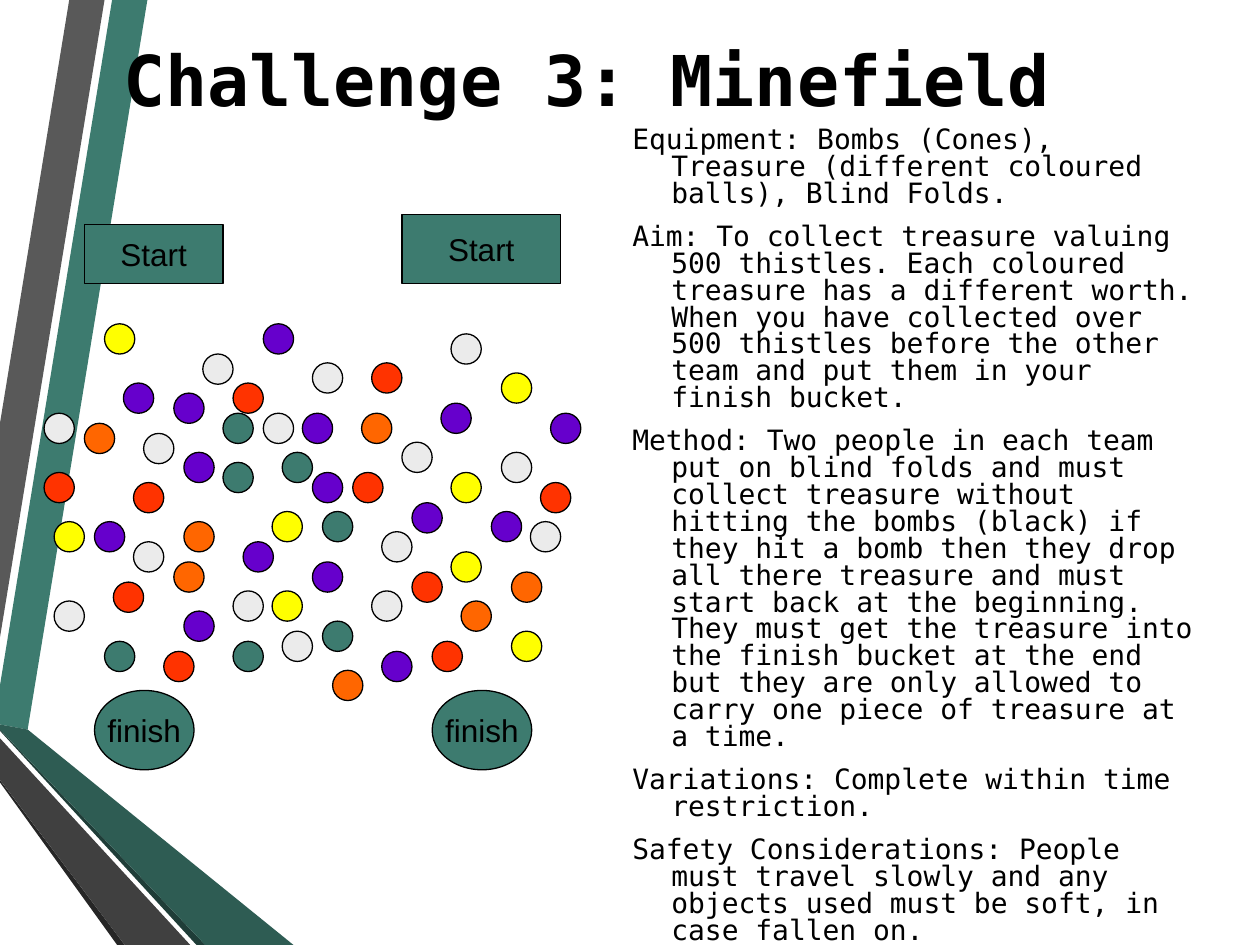
from pptx import Presentation
from pptx.dml.color import RGBColor
from pptx.enum import shapes, text
from pptx.util import Inches, Pt

# Content
GREEN, BLACK = "3D7B6F", "000000"
MONO, SANS = "DejaVu Sans Mono", "Arial"
TITLE = "Challenge 3: Minefield "
INSTRUCTIONS = [
    "Equipment: Bombs (Cones), Treasure (different coloured balls), Blind Folds.",
    "Aim: To collect treasure valuing 500 thistles. Each coloured treasure has a "
    "different worth. When you have collected over 500 thistles before the other "
    "team and put them in your finish bucket.",
    "Method: Two people in each team put on blind folds and must collect treasure "
    "without hitting the bombs (black) if they hit a bomb then they drop all there "
    "treasure and must start back at the beginning. They must get the treasure into "
    "the finish bucket at the end but they are only allowed to carry one piece of "
    "treasure at a time.",
    "Variations: Complete within time restriction.",
    "Safety Considerations: People must travel slowly and any objects used must be "
    "soft, in case fallen on.",
]
RIBBONS = [
    (GREEN, [(0, 5.44), (0, 5.75), (0.22, 5.79), (1.17, 0), (0.89, 0)]),
    ("595959", [(0.83, 0), (0.55, 0), (0, 3.36), (0, 5.06)]),
    ("262626", [(0, 6.19), (0, 6.21), (0.93, 7.5), (0.99, 7.5)]),
    ("1F3D38", [(0, 5.79), (0, 5.8), (1.56, 7.5), (1.63, 7.5)]),
    ("2E5C53", [(0, 5.79), (1.63, 7.5), (2.33, 7.5), (0.22, 5.79), (0, 5.75)]),
    ("404040", [(0, 6.19), (0.99, 7.5), (1.51, 7.5), (0, 5.86)]),
]
RECTANGLE, OVAL = shapes.MSO_SHAPE.RECTANGLE, shapes.MSO_SHAPE.OVAL
STATIONS = [
    ("Start", RECTANGLE, (0.67, 1.78, 1.1, 0.47)),
    ("Start", RECTANGLE, (3.19, 1.7, 1.26, 0.55)),
    ("finish", OVAL, (0.75, 5.48, 0.79, 0.63)),
    ("finish", OVAL, (3.43, 5.48, 0.79, 0.63)),
]
BALL_SIZE = 0.24
BALLS = {  # colour: left and top of each ball
    "EBEBEB": [
        (1.61, 2.81), (3.58, 2.65), (0.35, 3.28), (2.48, 2.88), (3.98, 3.59),
        (2.09, 3.28), (1.14, 3.44), (3.19, 3.51), (4.21, 4.14), (1.06, 4.3),
        (0.43, 4.77), (1.85, 4.69), (2.95, 4.69), (2.24, 5.01), (3.03, 4.22)],
    "FFFF00": [
        (0.83, 2.57), (3.98, 2.96), (3.58, 3.75), (2.16, 4.06), (3.58, 4.38),
        (0.43, 4.14), (2.16, 4.69), (4.06, 5.01)],
    "6600CC": [
        (2.09, 2.57), (0.98, 3.04), (4.37, 3.28), (1.38, 3.12), (3.5, 3.2),
        (1.46, 3.59), (2.4, 3.28), (3.9, 4.06), (3.27, 3.99), (0.75, 4.14),
        (1.93, 4.3), (2.48, 4.46), (2.48, 3.75), (1.46, 4.85), (3.03, 5.17)],
    "FF3300": [
        (2.95, 2.88), (1.85, 3.04), (0.35, 3.75), (4.29, 3.83), (1.06, 3.83),
        (2.8, 3.75), (0.9, 4.62), (3.27, 4.54), (3.43, 5.09), (1.3, 5.17)],
    "FF6600": [
        (0.67, 3.36), (2.87, 3.28), (1.46, 4.14), (4.06, 4.54), (1.38, 4.46),
        (3.66, 4.77), (2.64, 5.32)],
    GREEN: [
        (2.24, 3.59), (1.77, 3.28), (1.77, 3.67), (2.56, 4.06), (2.56, 4.93),
        (1.85, 5.09), (0.83, 5.09)],
}


def colour(value):
    return RGBColor.from_string(value)


def box(*lengths):
    return [Inches(length) for length in lengths]


def paint(shape, fill, outlined=True):
    shape.shadow.inherit = False
    shape.fill.solid()
    shape.fill.fore_color.rgb = colour(fill)
    if outlined:
        shape.line.color.rgb = colour(BLACK)
        shape.line.width = Pt(0.75)
    else:
        shape.line.fill.background()


def add_outlined(kind, place, fill):
    shape = slide.shapes.add_shape(kind, *box(*place))
    paint(shape, fill)
    return shape


def format_text(frame, font_name, size, align, wrap=True, bold=False):
    frame.word_wrap = wrap
    frame.auto_size = text.MSO_AUTO_SIZE.NONE
    frame.vertical_anchor = text.MSO_ANCHOR.MIDDLE
    for paragraph in frame.paragraphs:
        paragraph.alignment = align
        for run in paragraph.runs:
            run.font.name, run.font.size, run.font.bold = font_name, Pt(size), bold
            run.font.color.rgb = colour(BLACK)


presentation = Presentation()
presentation.slide_width, presentation.slide_height = box(10, 7.5)
slide = presentation.slides.add_slide(presentation.slide_layouts[5])

# Ribbons down the left edge
for fill, points in RIBBONS:
    start, *others = [box(*point) for point in points]
    builder = slide.shapes.build_freeform(*start)
    builder.add_line_segments(others, close=True)
    paint(builder.convert_to_shape(), fill, outlined=False)

# Title, in front of the ribbons
title = slide.shapes.title
title.element.getparent().append(title.element)
title.left, title.top, title.width, title.height = box(0.32, 0, 9, 1.25)
title.text_frame.text = TITLE
format_text(title.text_frame, MONO, 40, text.PP_ALIGN.CENTER, bold=True)

# Instructions with hanging indents
frame = slide.shapes.add_textbox(*box(4.92, 1.75, 4.72, 4.92)).text_frame
frame.text = "\n".join(INSTRUCTIONS)
frame.margin_top = Inches(0.15)
format_text(frame, MONO, 16, text.PP_ALIGN.LEFT)
for index, paragraph in enumerate(frame.paragraphs):
    properties = paragraph._p.get_or_add_pPr()
    properties.set("marL", str(Inches(0.31)))
    properties.set("indent", str(Inches(-0.31)))
    paragraph.line_spacing = 0.8
    paragraph.space_before = Pt(3.2 if index else 0)
    paragraph.space_after = Pt(6)

# Start and finish stations
for label, kind, place in STATIONS:
    station = add_outlined(kind, place, GREEN)
    station.text_frame.text = label
    format_text(station.text_frame, SANS, 18, text.PP_ALIGN.CENTER, wrap=False)

# Treasure balls
for fill, corners in BALLS.items():
    for left, top in corners:
        add_outlined(OVAL, (left, top, BALL_SIZE, BALL_SIZE), fill)

presentation.save("out.pptx")
